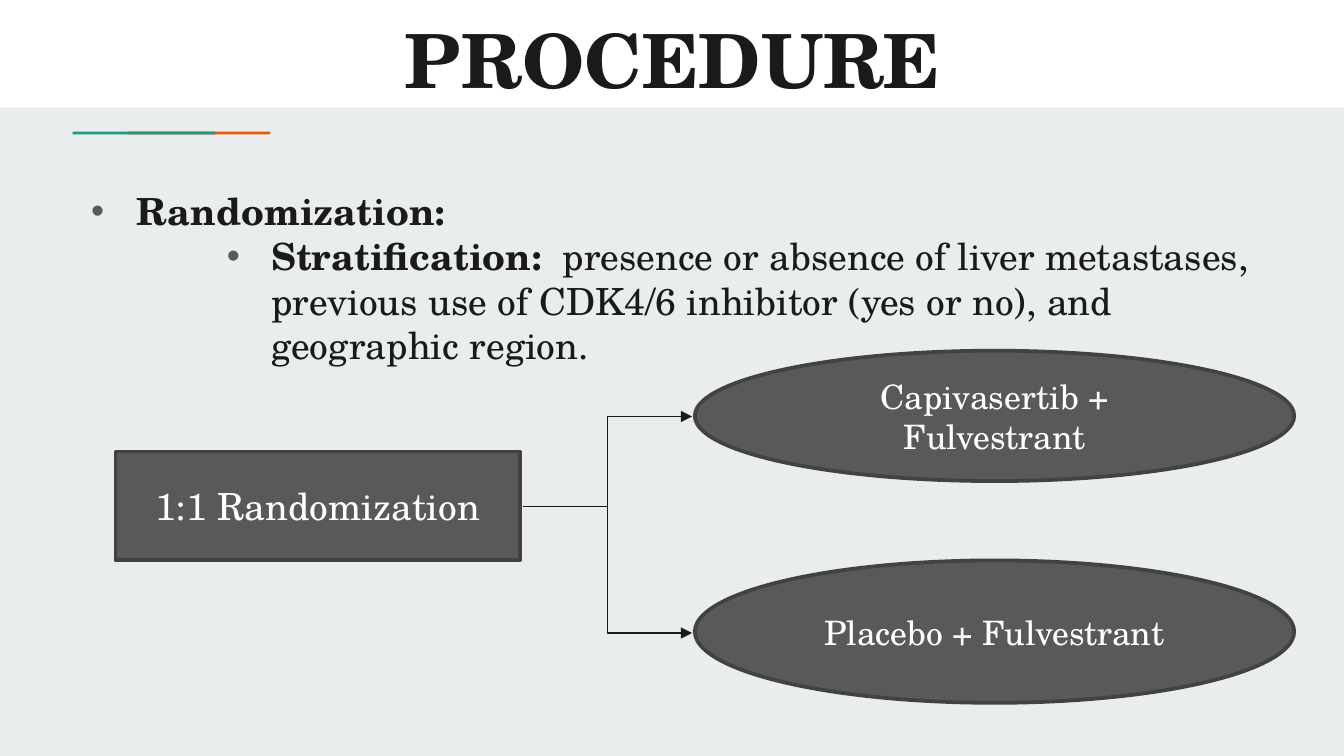
from lxml.etree import SubElement
from pptx import Presentation
from pptx.dml.color import RGBColor
from pptx.enum.shapes import MSO_CONNECTOR as Link, MSO_SHAPE as Shape
from pptx.enum.text import MSO_ANCHOR as Anchor, PP_ALIGN as Align
from pptx.oxml.ns import qn
from pptx.util import Inches, Pt

INK = RGBColor(0x1A, 0x1A, 0x1A)
WHITE = RGBColor(0xFF, 0xFF, 0xFF)
PALE = RGBColor(0xE9, 0xED, 0xEE)
GRAY = RGBColor(0x59, 0x59, 0x59)
EDGE = RGBColor(0x42, 0x42, 0x42)
TEAL = RGBColor(0x1A, 0x99, 0x88)
ORANGE = RGBColor(0xEB, 0x56, 0x00)


class Deck:
    font = "TeX Gyre Schola"

    def __init__(self):
        self.prs = Presentation()
        self.prs.slide_width = Inches(10)
        self.prs.slide_height = Inches(10 * 9 / 16)
        self.slide = self.prs.slides.add_slide(self.prs.slide_layouts[5])
        self.shapes = self.slide.shapes
        fill = self.slide.background.fill
        fill.solid()
        fill.fore_color.rgb = PALE

    def style(self, para, size, color, bold=False):
        for run in para.runs:
            run.font.name = self.font
            run.font.size = Pt(size)
            run.font.color.rgb = color
            run.font.bold = bold

    def inset(self, frame):
        frame.word_wrap = True
        frame.margin_left = frame.margin_right = Inches(0.1)
        frame.margin_top = frame.margin_bottom = Inches(0.1)

    def block(self, kind, box, color):
        shape = self.shapes.add_shape(kind, *map(Inches, box))
        shape.shadow.inherit = False
        shape.fill.solid()
        shape.fill.fore_color.rgb = color
        shape.line.fill.background()
        return shape

    def title(self, text, box):
        title = self.shapes.title
        title.left, title.top, title.width, title.height = map(Inches, box)
        self.shapes._spTree.append(title._element)
        frame = title.text_frame
        frame.text = text
        self.inset(frame)
        frame.vertical_anchor = Anchor.TOP
        para = frame.paragraphs[0]
        para.alignment = Align.CENTER
        self.style(para, 40, INK, True)

    def node(self, kind, box, text, size):
        shape = self.block(kind, box, GRAY)
        shape.line.color.rgb = EDGE
        shape.line.width = Pt(2)
        frame = shape.text_frame
        frame.text = text
        frame.word_wrap = True
        frame.vertical_anchor = Anchor.MIDDLE
        para = frame.paragraphs[0]
        para.alignment = Align.CENTER
        self.style(para, size, WHITE)

    def bullets(self, box, items):
        frame = self.shapes.add_textbox(*map(Inches, box)).text_frame
        self.inset(frame)
        for i, (head, rest, left, hang) in enumerate(items):
            para = frame.add_paragraph() if i else frame.paragraphs[0]
            para.text = head
            para.level = i
            para.alignment = Align.LEFT if i else Align.JUSTIFY
            if rest:
                para.add_run().text = rest
            self.style(para, 20, INK)
            para.runs[0].font.bold = True
            props = para._p.get_or_add_pPr()
            props.set("marL", str(Inches(left)))
            props.set("indent", str(-Inches(hang)))
            tint = SubElement(props, qn("a:buClr"))
            SubElement(tint, qn("a:srgbClr"), val=str(GRAY))
            SubElement(props, qn("a:buFont"), typeface="Arial")
            SubElement(props, qn("a:buChar"), char="•")

    def arrow(self, start, end):
        link = self.shapes.add_connector(Link.ELBOW, *map(Inches, start + end))
        link.line.color.rgb = INK
        link.line.width = Pt(0.75)
        SubElement(link.line._get_or_add_ln(), qn("a:tailEnd"), type="triangle")
        SubElement(link._element.spPr, qn("a:effectLst"))

    def save(self):
        self.prs.save("out.pptx")


def main():
    deck = Deck()
    deck.block(Shape.RECTANGLE, (0, 0, 10, 0.8), WHITE)
    for left, color in ((0.95, ORANGE), (0.54, TEAL)):
        deck.block(Shape.RECTANGLE, (left, 0.98, 1.06, 0.02), color)
    deck.title("PROCEDURE", (0.8, 0, 8.41, 0.9))
    deck.bullets((0.42, 1.3, 9.16, 4.19), (
        ("Randomization: ", "", 0.5, 0.34),
        ("Stratification:",
         "  presence or absence of liver metastases, previous use of "
         "CDK4/6 inhibitor (yes or no), and geographic region.", 1.5, 0.33),
    ))
    deck.node(Shape.RECTANGLE, (0.86, 3.36, 3.01, 0.81),
              "1:1 Randomization", 20)
    arms = (("Capivasertib + Fulvestrant", 2.61, 0.97, 3.1),
            ("Placebo + Fulvestrant", 4.17, 1.06, 4.71))
    for text, top, high, tip in arms:
        deck.node(Shape.OVAL, (5.17, top, 4.46, high), text, 18)
        deck.arrow((3.89, 3.77), (5.15, tip))
    deck.save()


if __name__ == "__main__":
    main()
